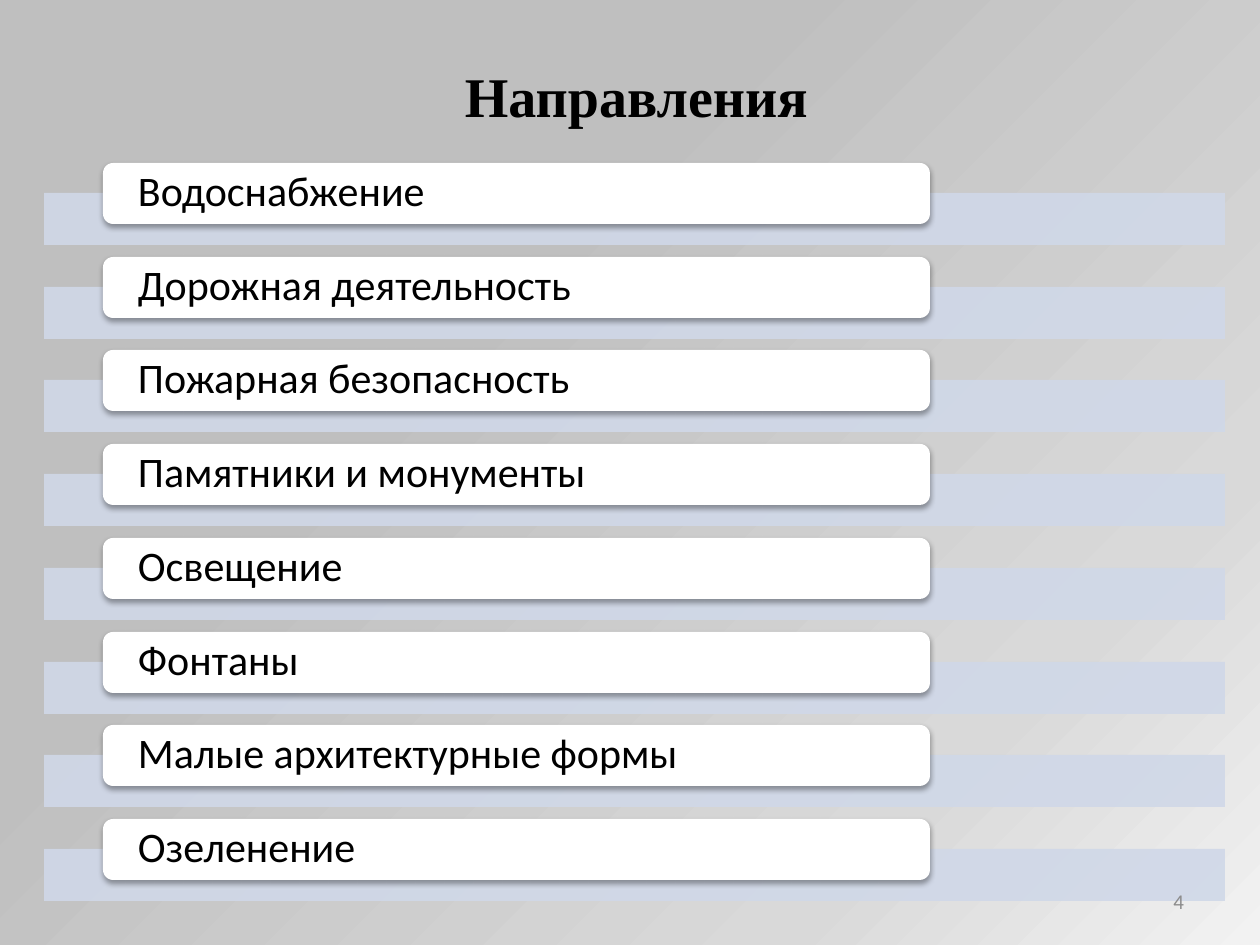
from dataclasses import dataclass

from lxml import etree
from pptx import Presentation
from pptx.dml.color import RGBColor
from pptx.enum.shapes import MSO_SHAPE
from pptx.enum.text import MSO_ANCHOR, PP_ALIGN
from pptx.oxml import parse_xml
from pptx.oxml.ns import nsdecls, qn
from pptx.shapes.autoshape import Shape
from pptx.shapes.group import GroupShape
from pptx.shapes.shapetree import SlideShapes
from pptx.slide import Slide
from pptx.util import Emu, Pt

RECTANGLE = MSO_SHAPE.RECTANGLE
ROUNDED = MSO_SHAPE.ROUNDED_RECTANGLE
TOP, MIDDLE = MSO_ANCHOR.TOP, MSO_ANCHOR.MIDDLE
LEFT, CENTER, RIGHT = PP_ALIGN.LEFT, PP_ALIGN.CENTER, PP_ALIGN.RIGHT
EMU_PER_PX = 914400 // 126
BLANK_LAYOUT = 6


@dataclass(frozen=True)
class Theme:
    text: str = "000000"
    band: str = "D0D8E8"
    band_opacity: int = 90
    card: str = "FFFFFF"
    number: str = "8C8C8C"
    background: tuple = ((0, "F2F2F2"), (22, "D9D9D9"), (65, "BFBFBF"))
    title_font: str = "Times New Roman"
    body_font: str = "Calibri"
    title_size: int = 32
    body_size: int = 24
    number_size: int = 12


@dataclass(frozen=True)
class Box:
    left: int
    top: int
    width: int
    height: int

    def moved_down(self, distance: int) -> "Box":
        return Box(self.left, self.top + distance, self.width, self.height)

    def emu(self) -> list[Emu]:
        return [px(value) for value in (self.left, self.top, self.width, self.height)]


@dataclass(frozen=True)
class TextStyle:
    font: str
    size: int
    color: str
    bold: bool = False
    alignment: PP_ALIGN = LEFT
    anchor: MSO_ANCHOR = MIDDLE
    inset_x: int = 13
    inset_y: int = 6
    line_spacing: float = 1.0


THEME = Theme()
TITLE_STYLE = TextStyle(THEME.title_font, THEME.title_size, THEME.text, True, CENTER, TOP)
ITEM_STYLE = TextStyle(THEME.body_font, THEME.body_size, THEME.text,
                       inset_x=31, inset_y=0, line_spacing=0.9)
NUMBER_STYLE = TextStyle(THEME.body_font, THEME.number_size, THEME.number, alignment=RIGHT)

TITLE_BOX = Box(194, 55, 885, 84)
NUMBER_BOX = Box(903, 876, 294, 50)
BAND = Box(44, 193, 1181, 52)
CARD = Box(103, 163, 827, 61)
LABEL = Box(107, 165, 820, 55)
LIST_SPAN = 656
DIRECTIONS = (
    "Водоснабжение",
    "Дорожная деятельность",
    "Пожарная безопасность",
    "Памятники и монументы",
    "Освещение",
    "Фонтаны",
    "Малые архитектурные формы",
    "Озеленение",
)


def px(value: int) -> Emu:
    return Emu(value * EMU_PER_PX)


def set_background(slide: Slide) -> None:
    stops = "".join(
        f'<a:gs pos="{position * 1000}"><a:srgbClr val="{color}"/></a:gs>'
        for position, color in THEME.background
    )
    background = parse_xml(
        f'<p:bg {nsdecls("p", "a")}><p:bgPr><a:gradFill rotWithShape="1">'
        f'<a:gsLst>{stops}</a:gsLst><a:path path="circle">'
        '<a:fillToRect l="100000" t="100000"/></a:path></a:gradFill>'
        '<a:effectLst/></p:bgPr></p:bg>'
    )
    slide.element.cSld.insert(0, background)


def add_text(shapes: SlideShapes, box: Box, text: str, style: TextStyle) -> None:
    frame = shapes.add_textbox(*box.emu()).text_frame
    frame.word_wrap = True
    frame.vertical_anchor = style.anchor
    frame.margin_left = frame.margin_right = px(style.inset_x)
    frame.margin_top = frame.margin_bottom = px(style.inset_y)
    paragraph = frame.paragraphs[0]
    paragraph.alignment = style.alignment
    paragraph.line_spacing = style.line_spacing
    run = paragraph.add_run()
    run.text = text
    run.font.name = style.font
    run.font.size = Pt(style.size)
    run.font.bold = style.bold
    run.font.color.rgb = RGBColor.from_string(style.color)


def add_block(group: GroupShape, kind: MSO_SHAPE, box: Box, color: str) -> Shape:
    shape = group.shapes.add_shape(kind, *box.emu())
    shape.shadow.inherit = False
    shape.fill.solid()
    shape.fill.fore_color.rgb = RGBColor.from_string(color)
    shape.line.fill.background()
    return shape


def set_opacity(shape: Shape, percent: int) -> None:
    color = shape.element.spPr.find(qn("a:solidFill")).find(qn("a:srgbClr"))
    etree.SubElement(color, qn("a:alpha"), val=str(percent * 1000))


def add_shadow(shape: Shape) -> None:
    effects = shape.element.spPr.find(qn("a:effectLst"))
    effects.append(parse_xml(
        f'<a:outerShdw {nsdecls("a")} blurRad="{Pt(3.1)}" dist="{Pt(1.8)}" '
        'dir="5400000" rotWithShape="0"><a:srgbClr val="000000">'
        '<a:alpha val="35000"/></a:srgbClr></a:outerShdw>'
    ))


def add_direction(group: GroupShape, text: str, offset: int) -> None:
    band = add_block(group, RECTANGLE, BAND.moved_down(offset), THEME.band)
    set_opacity(band, THEME.band_opacity)
    card = add_block(group, ROUNDED, CARD.moved_down(offset), THEME.card)
    add_shadow(card)
    add_text(group.shapes, LABEL.moved_down(offset), text, ITEM_STYLE)


def main() -> None:
    presentation = Presentation()
    presentation.slide_width = px(1260)
    presentation.slide_height = px(945)
    slide = presentation.slides.add_slide(presentation.slide_layouts[BLANK_LAYOUT])
    set_background(slide)
    add_text(slide.shapes, TITLE_BOX, "Направления", TITLE_STYLE)
    group = slide.shapes.add_group_shape()
    for index, text in enumerate(DIRECTIONS):
        add_direction(group, text, round(index * LIST_SPAN / (len(DIRECTIONS) - 1)))
    add_text(slide.shapes, NUMBER_BOX, "4", NUMBER_STYLE)
    presentation.save("out.pptx")


if __name__ == "__main__":
    main()
